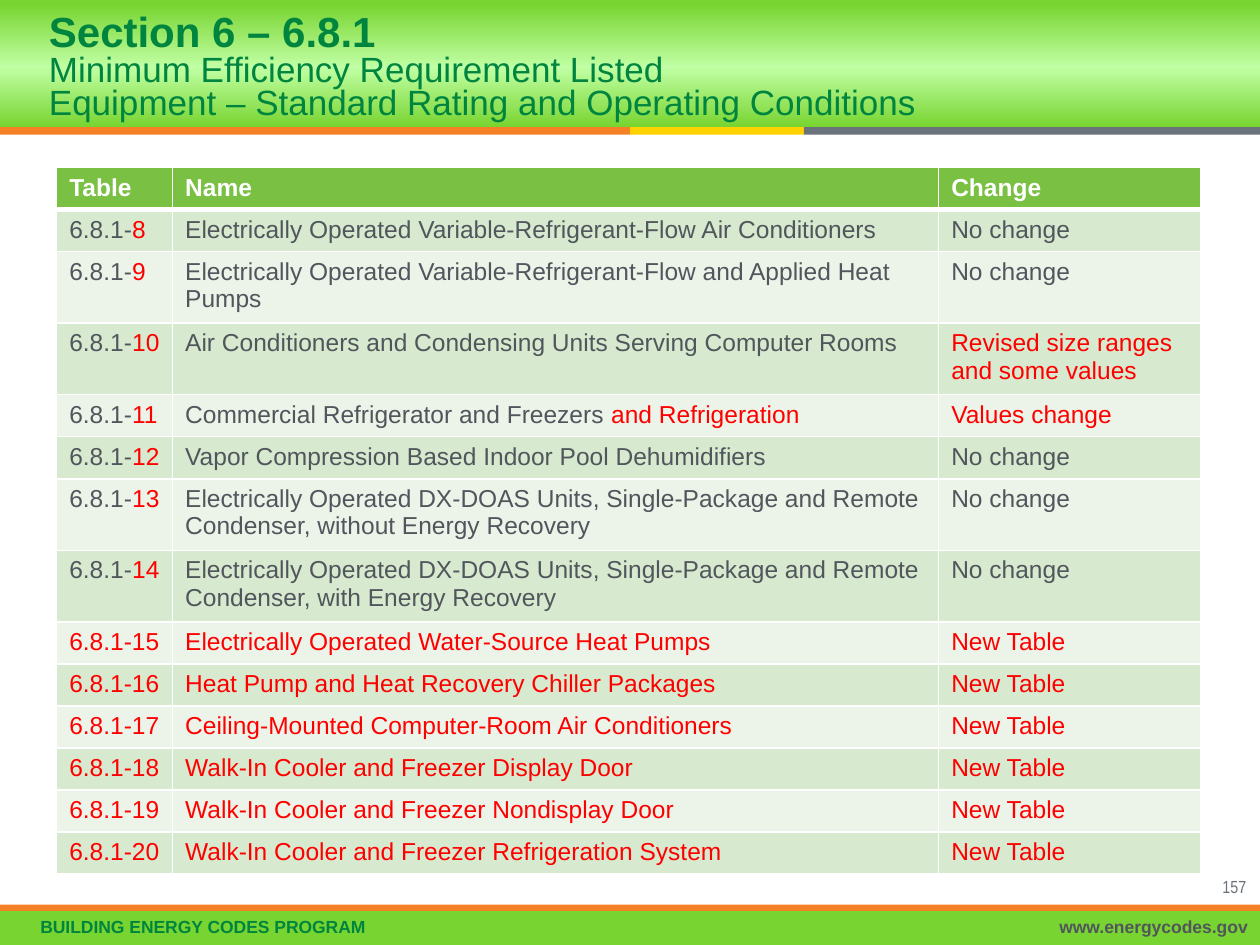
from copy import deepcopy

from lxml import etree
from pptx import Presentation
from pptx.dml.color import RGBColor
from pptx.enum.shapes import MSO_SHAPE
from pptx.enum.text import MSO_ANCHOR, PP_ALIGN
from pptx.oxml.ns import qn
from pptx.util import Inches, Pt

RECTANGLE = MSO_SHAPE.RECTANGLE
LEFT, RIGHT = PP_ALIGN.LEFT, PP_ALIGN.RIGHT
MIDDLE = MSO_ANCHOR.MIDDLE
COLORS = {
    "lime": "78D430", "pale lime": "C0FFA4", "orange": "F58025",
    "yellow": "FFD200", "slate": "6A737B", "gray": "50565C",
    "green": "00853F", "header": "7AC143", "dark band": "D7E9CF",
    "light band": "ECF4E9", "red": "FF0000", "white": "FFFFFF",
}
COLORS_RGB = {name: RGBColor.from_string(value) for name, value in COLORS.items()}


def add_bar(left, top, width, height, color):
    bar = slide.shapes.add_shape(
        RECTANGLE, Inches(left), Inches(top), Inches(width), Inches(height))
    bar.shadow.inherit = False
    bar.line.fill.background()
    bar.fill.solid()
    bar.fill.fore_color.rgb = COLORS_RGB[color]
    return bar


def add_run(paragraph, text, size, color, bold=False, font="Arial"):
    run = paragraph.add_run()
    run.text = text
    run.font.size = Pt(size)
    run.font.name = font
    run.font.bold = bold
    run.font.color.rgb = COLORS_RGB[color]


prs = Presentation()
prs.slide_width, prs.slide_height = Inches(10), Inches(7.5)
slide = prs.slides.add_slide(prs.slide_layouts[6])

# Header band, fading to pale in the middle
header = add_bar(-0.03, 0, 10.03, 1.01, "lime")
header.fill.gradient()
header.fill.gradient_angle = 90
stop_list = header.fill._fill._gradFill.find(qn("a:gsLst"))
stop_list.append(deepcopy(stop_list[-1]))
for stop, position, color in zip(
        header.fill.gradient_stops, (0, 0.47, 0.97), ("lime", "pale lime", "lime")):
    stop.position = position
    stop.color.rgb = COLORS_RGB[color]

# Stripes under the header and the footer band
for left, top, width, height, color in (
        (0, 1.01, 5, 0.06, "orange"),
        (5, 1.01, 1.38, 0.06, "yellow"),
        (6.38, 1.01, 3.62, 0.06, "slate"),
        (0, 7.23, 10, 0.27, "lime"),
        (0, 7.18, 10, 0.05, "orange")):
    add_bar(left, top, width, height, color)

# Footer texts and page number
for left, top, width, height, inset, align, spacing, text, color, bold, font in (
        (0.07, 7.24, 5.9, 0.26, 0.25, LEFT, 0.9,
         "BUILDING ENERGY CODES PROGRAM", "green", True, "Arial"),
        (5.99, 7.24, 4.01, 0.26, 0.1, RIGHT, 0.9,
         "www.energycodes.gov", "gray", True, "Arial"),
        (9.28, 6.9, 0.71, 0.18, 0.1, RIGHT, 1.0,
         "157", "slate", False, "Arial Narrow")):
    frame = slide.shapes.add_textbox(
        Inches(left), Inches(top), Inches(width), Inches(height)).text_frame
    frame.word_wrap = True
    frame.margin_left = Inches(inset)
    paragraph = frame.paragraphs[0]
    paragraph.alignment = align
    paragraph.line_spacing = spacing
    add_run(paragraph, text, 10, color, bold, font)

# Title
title = slide.shapes.add_textbox(
    Inches(0.29), Inches(0.04), Inches(9.4), Inches(1.01)).text_frame
title.word_wrap = True
title.vertical_anchor = MIDDLE
heading = title.paragraphs[0]
heading.line_spacing = 0.8
add_run(heading, "Section 6 – 6.8.1", 24, "green", True)
for line in ("Minimum Efficiency Requirement Listed",
             "Equipment – Standard Rating and Operating Conditions"):
    heading.add_line_break()
    add_run(heading, line, 20, "green")

# Table: every cell is a list of (text, color) runs
renumbered = (
    ("Electrically Operated Variable-Refrigerant-Flow Air Conditioners", "", "No change"),
    ("Electrically Operated Variable-Refrigerant-Flow and Applied Heat Pumps", "",
     "No change"),
    ("Air Conditioners and Condensing Units Serving Computer Rooms", "",
     "Revised size ranges and some values"),
    ("Commercial Refrigerator and Freezers ", "and Refrigeration", "Values change"),
    ("Vapor Compression Based Indoor Pool Dehumidifiers", "", "No change"),
    ("Electrically Operated DX-DOAS Units, Single-Package and Remote Condenser, "
     "without Energy Recovery", "", "No change"),
    ("Electrically Operated DX-DOAS Units, Single-Package and Remote Condenser, "
     "with Energy Recovery", "", "No change"),
)
new_tables = (
    "Electrically Operated Water-Source Heat Pumps",
    "Heat Pump and Heat Recovery Chiller Packages",
    "Ceiling-Mounted Computer-Room Air Conditioners",
    "Walk-In Cooler and Freezer Display Door",
    "Walk-In Cooler and Freezer Nondisplay Door",
    "Walk-In Cooler and Freezer Refrigeration System",
)
rows = [[[(label, "white")] for label in ("Table", "Name", "Change")]]
for number, (name, addition, change) in enumerate(renumbered, start=8):
    name_runs = [(name, "gray")]
    if addition:
        name_runs.append((addition, "red"))
    change_color = "gray" if change == "No change" else "red"
    rows.append([[("6.8.1-", "gray"), (str(number), "red")],
                 name_runs, [(change, change_color)]])
for number, name in enumerate(new_tables, start=15):
    rows.append([[(text, "red")] for text in (f"6.8.1-{number}", name, "New Table")])

row_height = Inches(0.31)
table = slide.shapes.add_table(
    len(rows), 3, Inches(0.45), Inches(1.33), Inches(9.08), row_height * len(rows)).table
for column, width in zip(table.columns, (0.92, 6.08, 2.08)):
    column.width = Inches(width)
for r, row in enumerate(rows):
    table.rows[r].height = row_height
    band = "header" if r == 0 else "dark band" if r % 2 else "light band"
    for c, runs in enumerate(row):
        cell = table.cell(r, c)
        for text, color in runs:
            add_run(cell.text_frame.paragraphs[0], text, 14, color, bold=r == 0)
        properties = cell._tc.get_or_add_tcPr()
        for side in ("lnL", "lnR", "lnT", "lnB"):
            thick = (r, side) in ((0, "lnB"), (1, "lnT"))
            border = etree.SubElement(
                properties, qn(f"a:{side}"), w=str(Pt(3 if thick else 1)))
            line_fill = etree.SubElement(border, qn("a:solidFill"))
            etree.SubElement(line_fill, qn("a:srgbClr"), val=COLORS["white"])
        cell.fill.solid()
        cell.fill.fore_color.rgb = COLORS_RGB[band]

prs.save("out.pptx")
